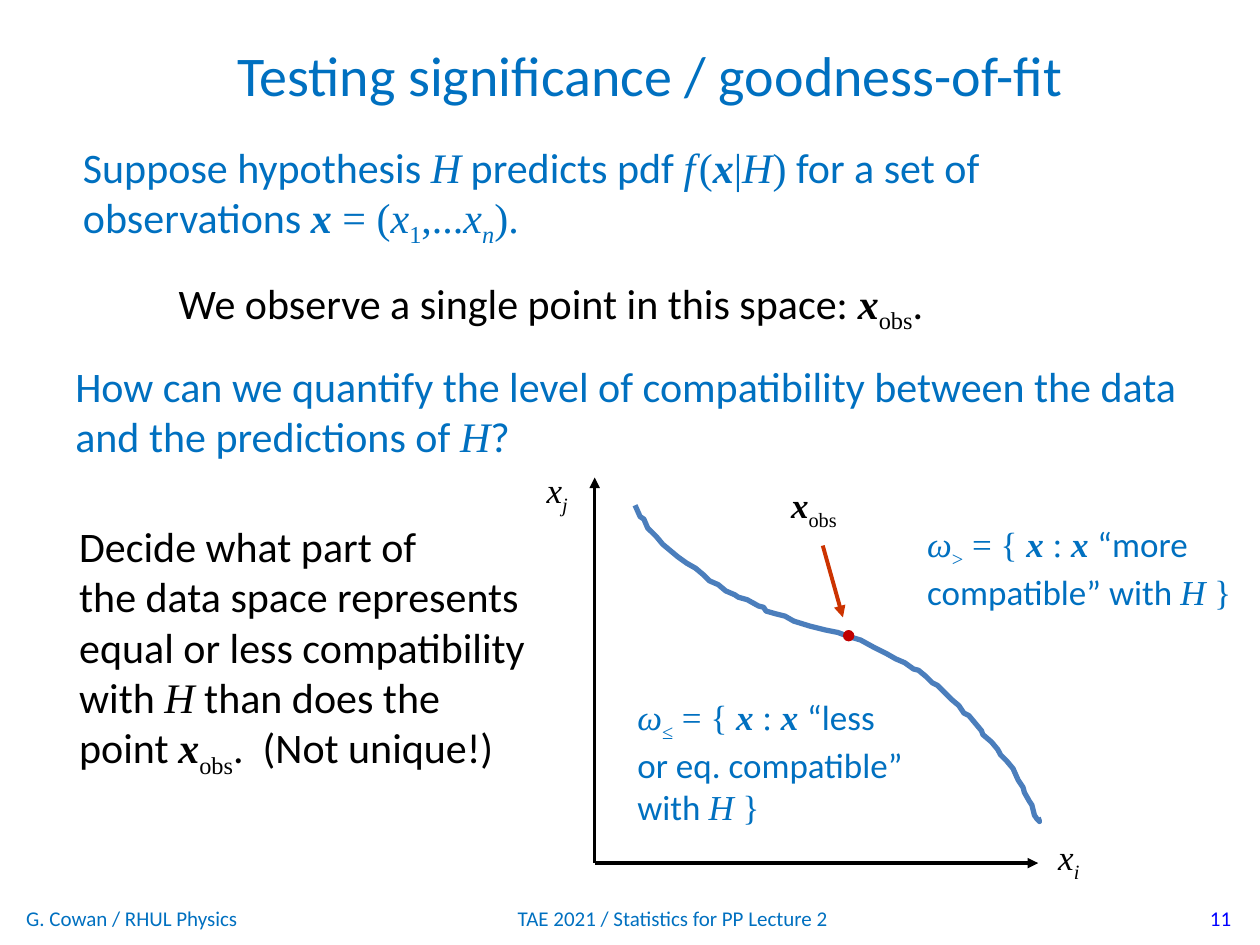
from dataclasses import dataclass
from typing import Optional

from lxml.etree import SubElement
from pptx import Presentation
from pptx.dml.color import RGBColor
from pptx.enum.shapes import MSO_CONNECTOR, MSO_SHAPE
from pptx.enum.text import MSO_ANCHOR, PP_ALIGN
from pptx.oxml.ns import qn
from pptx.util import Pt

PX = 9144
COLORS = {"blue": "0070C0", "black": "000000", "number": "0000FF",
          "curve": "4B7EBC", "arrow": "CC3300", "point": "C00000"}


@dataclass(frozen=True)
class Style:
    font: str = "Times New Roman"
    bold: bool = False
    italic: bool = False
    sub: bool = False
    size: Optional[int] = None


SANS = Style("Calibri")
ROMAN = Style()
VAR = Style(italic=True)
VEC = Style(bold=True, italic=True)
SUB = Style(sub=True)
SUBVAR = Style(italic=True, sub=True)
THIN = Style(size=8)

Runs = list[tuple[str, Style]]
X_OBS: Runs = [("x", VEC), ("obs", SUB)]


@dataclass(frozen=True)
class Label:
    box: tuple[int, int, int, int]
    size: int
    color: str
    lines: list[Runs]
    align: PP_ALIGN = PP_ALIGN.LEFT
    anchor: MSO_ANCHOR = MSO_ANCHOR.TOP
    wrap: bool = True


@dataclass(frozen=True)
class Arrow:
    start: tuple[int, int]
    end: tuple[int, int]
    color: str
    width: float


def region(sign: str, first_word: str) -> Runs:
    """Return the opening line of a region's definition."""
    return [("ω", VAR), (sign, SUB), (" = { ", ROMAN), ("x", VEC),
            (" : ", ROMAN), ("x ", VEC), (first_word, SANS)]


def footer(left: int, width: int, text: str, color: str, align: PP_ALIGN) -> Label:
    """Return a label on the footer line."""
    return Label((left, 709, width, 40), 12, color, [[(text, SANS)]],
                 align, MSO_ANCHOR.MIDDLE)


def axis_label(left: int, top: int, index: str) -> Label:
    """Return the label of one axis."""
    return Label((left, top, 38, 44), 20, "black",
                 [[("x", VAR), (index, SUBVAR)]], wrap=False)


LABELS = [
    footer(754, 233, "11", "number", PP_ALIGN.RIGHT),
    footer(11, 233, "G. Cowan / RHUL Physics", "blue", PP_ALIGN.LEFT),
    footer(226, 616, "TAE 2021 / Statistics for PP Lecture 2", "blue", PP_ALIGN.CENTER),
    Label((138, 27, 756, 47), 32, "blue",
          [[("Testing significance / goodness-of-fit", SANS)]], PP_ALIGN.CENTER),
    Label((56, 107, 745, 91), 24, "blue", [
        [("Suppose hypothesis ", SANS), ("H", VAR), (" predicts pdf ", SANS),
         ("f", VAR), (" ", THIN), ("(", ROMAN), ("x", VEC), ("|", ROMAN),
         ("H", VAR), (")", ROMAN), (" for a set of", SANS)],
        [("observations ", SANS), ("x", VEC), (" = (", ROMAN), ("x", VAR), ("1", SUB),
         (",...", ROMAN), ("x", VAR), ("n", SUBVAR), (").", ROMAN)]], wrap=False),
    Label((132, 215, 628, 50), 24, "black",
          [[("We observe a single point in this space: ", SANS), *X_OBS, (".", SANS)]],
          wrap=False),
    Label((50, 281, 927, 91), 24, "blue",
          [[("How can we quantify the level of compatibility between the data "
             "and the predictions of ", SANS), ("H", VAR), ("?", SANS)]]),
    Label((53, 408, 382, 212), 24, "black", [
        [("Decide what part of", SANS)],
        [("the data space represents equal or less compatibility with ", SANS),
         ("H", VAR), (" than does the point ", SANS), *X_OBS,
         (".  (Not unique!)", SANS)]]),
    Label((496, 547, 288, 111), 20, "blue", [
        region("≤", "“less"), [("or eq. compatible”", SANS)],
        [("with ", SANS), ("H", VAR), (" }", ROMAN)]]),
    Label((726, 410, 271, 77), 20, "blue", [
        region(">", "“more"),
        [("compatible” with ", SANS), ("H", VAR), (" }", ROMAN)]]),
    Label((618, 379, 60, 44), 20, "black", [X_OBS], wrap=False),
    axis_label(830, 658, "i"),
    axis_label(424, 367, "j"),
]

ORIGIN = (472, 685)
ARROWS = [
    Arrow((653, 433), (669, 490), "arrow", 2.25),
    Arrow(ORIGIN, (824, 685), "black", 2),
    Arrow(ORIGIN, (472, 379), "black", 2),
]

BOUNDARY = [
    (504, 401), (508, 410), (511, 412), (514, 419), (521, 426), (526, 432),
    (532, 437), (538, 442), (545, 447), (552, 451), (558, 456), (563, 461),
    (570, 464), (576, 469), (583, 472), (586, 474), (593, 476), (602, 481),
    (606, 482), (608, 485), (615, 487), (623, 489), (630, 493), (643, 497),
    (655, 500), (665, 502), (673, 505), (683, 508), (694, 514), (704, 519),
    (711, 523), (718, 526), (725, 531), (729, 532), (735, 537), (740, 542),
    (744, 544), (755, 555), (761, 560), (765, 566), (769, 568), (774, 574),
    (779, 580), (780, 583), (787, 589), (792, 595), (794, 599), (799, 604),
    (804, 610), (808, 619), (812, 625), (813, 629), (817, 636), (819, 639),
    (821, 647), (823, 650), (825, 652), (824, 649),
]


def rgb(name: str) -> RGBColor:
    """Return a named colour."""
    return RGBColor.from_string(COLORS[name])


def draw_label(s, label: Label) -> None:
    """Draw a text box run by run."""
    tf = s.shapes.add_textbox(*(v * PX for v in label.box)).text_frame
    tf.word_wrap = label.wrap
    tf.vertical_anchor = label.anchor
    for i, runs in enumerate(label.lines):
        p = tf.add_paragraph() if i else tf.paragraphs[0]
        p.alignment = label.align
        for text, style in runs:
            r = p.add_run()
            r.text = text
            r.font.name = style.font
            r.font.size = Pt(style.size or label.size)
            r.font.bold = style.bold
            r.font.italic = style.italic
            r.font.color.rgb = rgb(label.color)
            if style.sub:
                r._r.get_or_add_rPr().set("baseline", "-25000")


def draw_arrow(s, arrow: Arrow) -> None:
    """Draw a straight line with a triangular head at its end."""
    sp = s.shapes.add_connector(MSO_CONNECTOR.STRAIGHT,
                                *(v * PX for v in arrow.start + arrow.end))
    sp.line.color.rgb = rgb(arrow.color)
    sp.line.width = Pt(arrow.width)
    SubElement(sp.line._get_or_add_ln(), qn("a:tailEnd"), type="triangle")
    SubElement(sp._element.spPr, qn("a:effectLst"))


def draw_boundary(s, points: list[tuple[int, int]]) -> None:
    """Draw the open line between the two regions."""
    builder = s.shapes.build_freeform(*points[0], scale=PX)
    builder.add_line_segments(points[1:], close=False)
    sp = builder.convert_to_shape()
    sp.shadow.inherit = False
    sp.fill.background()
    sp.line.color.rgb = rgb("curve")
    sp.line.width = Pt(3)


def draw_point(s, left: int, top: int, size: int) -> None:
    """Draw the observed point."""
    sp = s.shapes.add_shape(MSO_SHAPE.OVAL, left * PX, top * PX, size * PX, size * PX)
    sp.shadow.inherit = False
    sp.fill.solid()
    sp.fill.fore_color.rgb = rgb("point")
    sp.line.fill.background()


def main() -> None:
    """Build the slide and save it."""
    prs = Presentation()
    prs.slide_width, prs.slide_height = 1000 * PX, 750 * PX
    s = prs.slides.add_slide(prs.slide_layouts[6])
    draw_boundary(s, BOUNDARY)
    for label in LABELS:
        draw_label(s, label)
    for arrow in ARROWS:
        draw_arrow(s, arrow)
    draw_point(s, 669, 500, 9)
    prs.save("out.pptx")


if __name__ == "__main__":
    main()
